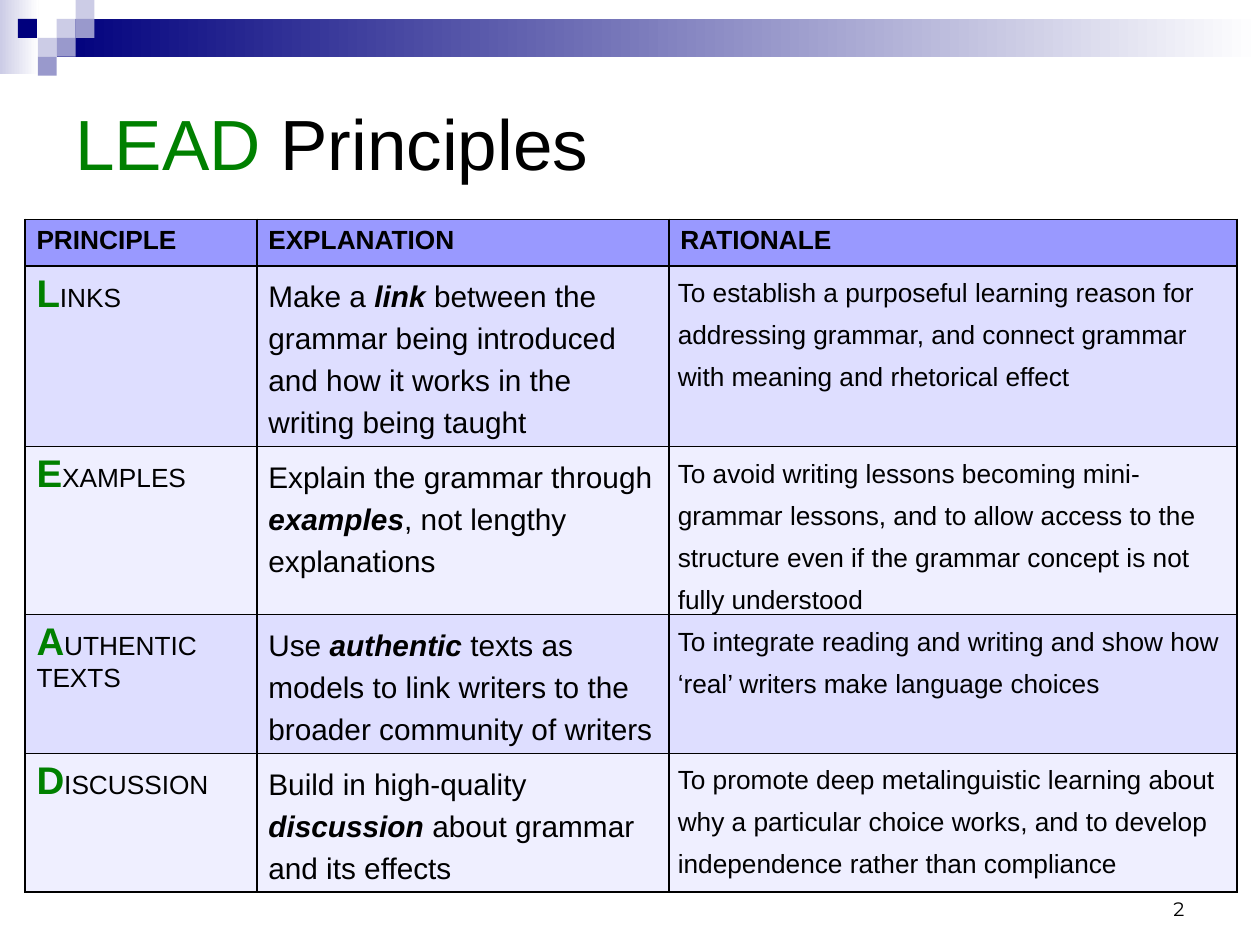
from lxml import etree
from pptx import Presentation
from pptx import util as u
from pptx.dml.color import RGBColor
from pptx.enum import shapes, text
from pptx.oxml.ns import qn

COLORS = {"navy": "00007D", "mist": "CCCCE6", "lilac": "9999CC", "white": "FFFFFF",
          "green": "008000", "black": "000000",
          "header": "9999FF", "odd": "DEDEFF", "even": "EFEFFF"}

# Corner squares: column, row, colour
SQUARES = [(3, 1, "mist"), (4, 0, "mist"), (4, 1, "lilac"), (2, 2, "mist"),
           (0.95, 1, "navy"), (3, 2, "lilac"), (2, 3, "lilac")]

HEADERS = ["PRINCIPLE", "EXPLANATION", "RATIONALE"]
# Initial, rest of the principle, (before, key word, after), rationale
PRINCIPLES = [
    ("L", "INKS",
     ("Make a ", "link", " between the grammar being introduced and how it works "
      "in the writing being taught"),
     "To establish a purposeful learning reason for addressing grammar, and connect "
     "grammar with meaning and rhetorical effect"),
    ("E", "XAMPLES",
     ("Explain the grammar through ", "examples", ", not lengthy explanations"),
     "To avoid writing lessons becoming mini-grammar lessons, and to allow access to the "
     "structure even if the grammar concept is not fully understood"),
    ("A", "UTHENTIC TEXTS",
     ("Use ", "authentic", " texts as models to link writers to the broader community "
      "of writers"),
     "To integrate reading and writing and show how ‘real’ writers make language choices"),
    ("D", "ISCUSSION",
     ("Build in high-quality ", "discussion", " about grammar and its effects"),
     "To promote deep metalinguistic learning about why a particular choice works, and to "
     "develop independence rather than compliance"),
]


def rgb(name):
    return RGBColor.from_string(COLORS[name])


class Deck:
    UNIT = 0.15  # grid step of the corner ornament, inches
    FONT = "Arial"

    def __init__(self):
        self.prs = Presentation()
        self.prs.slide_width, self.prs.slide_height = u.Inches(10), u.Inches(7.5)
        self.s = self.prs.slides.add_slide(self.prs.slide_layouts[6])

    def block(self, col, row, cols=1, rows=1, color="navy", fade=False):
        box = [u.Inches(n * self.UNIT) for n in (col, row, cols, rows)]
        sp = self.s.shapes.add_shape(shapes.MSO_SHAPE.RECTANGLE, *box)
        sp.shadow.inherit = False
        sp.line.fill.background()
        if fade:
            sp.fill.gradient()
            sp.fill.gradient_angle = 0
            for stop, name in zip(sp.fill.gradient_stops, (color, "white")):
                stop.color.rgb = rgb(name)
        else:
            sp.fill.solid()
            sp.fill.fore_color.rgb = rgb(color)

    def add_runs(self, p, runs, size, font=FONT, spacing=None):
        """Each run is (text, overrides of the paragraph's font)."""
        p.font.size, p.font.name = u.Pt(size), font
        p.font.color.rgb = rgb("black")
        if spacing:
            p.line_spacing = u.Pt(spacing)
        for words, style in runs:
            r = p.add_run()
            r.text = words
            r.font.bold, r.font.italic = style.get("bold"), style.get("italic")
            if "size" in style:
                r.font.size = u.Pt(style["size"])
            if "color" in style:
                r.font.color.rgb = rgb(style["color"])

    def label(self, x, y, w, h, runs, size, anchor, align=None, font=FONT):
        """Position and size are shares of the slide."""
        width, height = self.prs.slide_width, self.prs.slide_height
        sp = self.s.shapes.add_textbox(int(x * width), int(y * height),
                                       int(w * width), int(h * height))
        tf = sp.text_frame
        tf.word_wrap, tf.vertical_anchor = True, anchor
        tf.paragraphs[0].alignment = align
        self.add_runs(tf.paragraphs[0], runs, size, font)

    def table(self, x, y, widths, heights):
        frame = self.s.shapes.add_table(len(heights), len(widths), u.Inches(x), u.Inches(y),
                                        u.Inches(sum(widths)), u.Inches(sum(heights)))
        for column, width in zip(frame.table.columns, widths):
            column.width = u.Inches(width)
        for row, height in zip(frame.table.rows, heights):
            row.height = u.Inches(height)
        return frame.table

    def cell(self, cell, runs, size, fill, spacing=None, inset=(0.09, 0.05)):
        cell.margin_left = cell.margin_right = u.Inches(inset[0])
        cell.margin_top = cell.margin_bottom = u.Inches(inset[1])
        tcPr = cell._tc.get_or_add_tcPr()
        for side in ("lnL", "lnR", "lnT", "lnB"):
            ln = etree.SubElement(tcPr, qn(f"a:{side}"), w=str(u.Pt(1)))
            solid = etree.SubElement(ln, qn("a:solidFill"))
            etree.SubElement(solid, qn("a:srgbClr"), val=COLORS["black"])
        cell.fill.solid()
        cell.fill.fore_color.rgb = rgb(fill)
        self.add_runs(cell.text_frame.paragraphs[0], runs, size, spacing=spacing)


def main():
    deck = Deck()

    # Top banner and corner squares
    deck.block(0, 0, 2.05, 3.9, "mist", fade=True)
    deck.block(3, 1, 63.67, 2, "navy", fade=True)
    for col, row, color in SQUARES:
        deck.block(col, row, color=color)

    # Title
    deck.label(0.05, 0.06, 0.9, 0.18, [("LEAD", {"color": "green"}), (" Principles", {})],
               40.6, text.MSO_ANCHOR.MIDDLE)

    # Principles table
    table = deck.table(0.2, 1.74, [1.84, 3.27, 4.51], [0.37, 1.43, 1.33, 1.1, 1.1])
    for col, name in enumerate(HEADERS):
        deck.cell(table.cell(0, col), [(name, {"bold": True})], 15, "header")
    for row, (initial, rest, (before, key, after), reason) in enumerate(PRINCIPLES, 1):
        fill = "odd" if row % 2 else "even"
        big = {"size": 22, "color": "green", "bold": True}
        deck.cell(table.cell(row, 0), [(initial, big), (rest, {})], 15, fill)
        deck.cell(table.cell(row, 1),
                  [(before, {}), (key, {"bold": True, "italic": True}), (after, {})],
                  17, fill, spacing=24)
        deck.cell(table.cell(row, 2), [(reason, {})], 15, fill, spacing=24, inset=(0.07, 0))

    # Slide number
    deck.label(0.72, 0.91, 0.23, 0.07, [("2", {})], 11.1, text.MSO_ANCHOR.BOTTOM,
               text.PP_ALIGN.RIGHT, "Montserrat")

    deck.prs.save("out.pptx")


if __name__ == "__main__":
    main()
